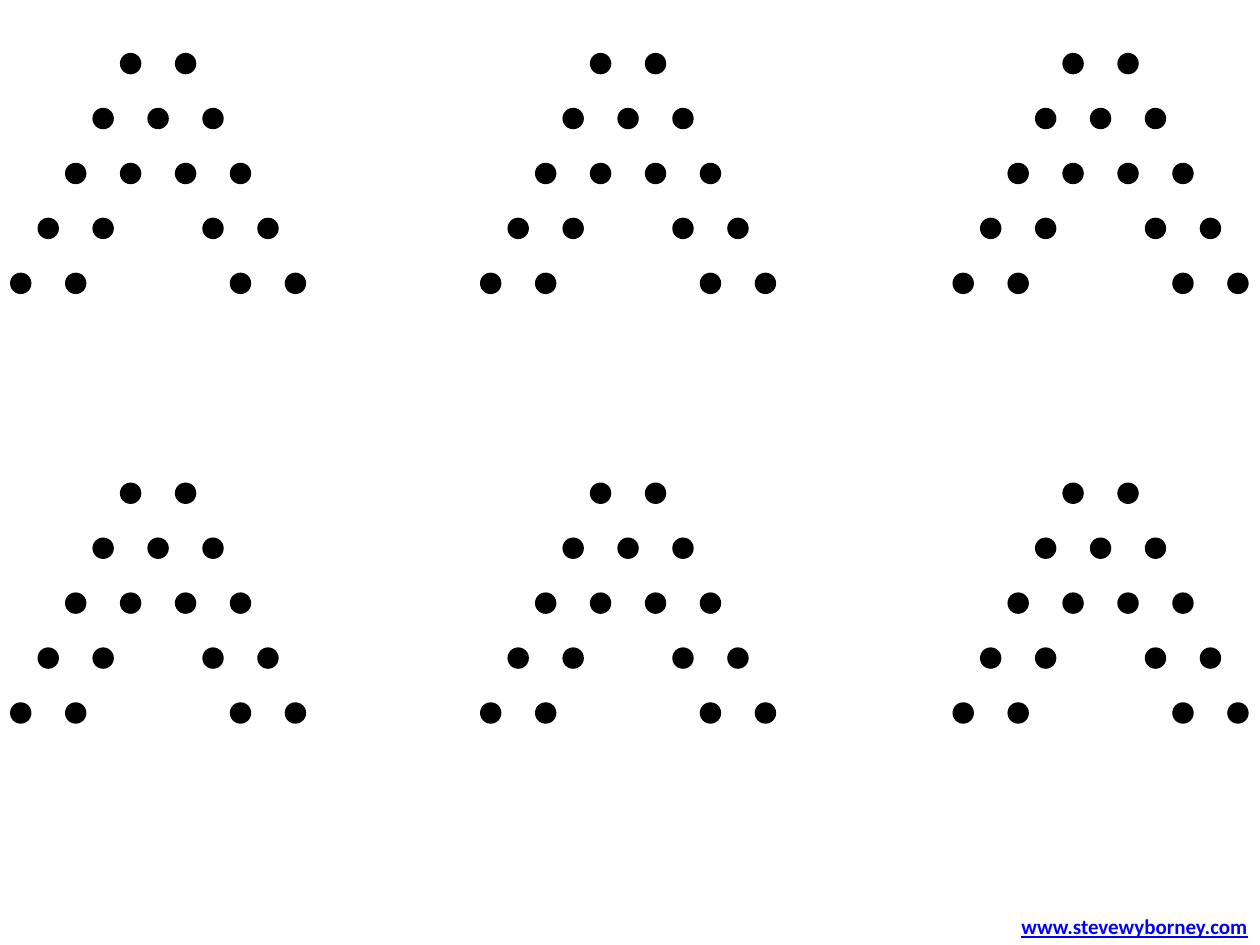
"""Build a sheet of six dot-pattern letters with a web address in the corner."""
from dataclasses import dataclass
from itertools import product

from pptx import Presentation
from pptx import util as u
from pptx.dml import color
from pptx.enum import shapes, text


@dataclass(frozen=True)
class Theme:
    """Colours, font and type size of the sheet."""
    dot: color.RGBColor = color.RGBColor(0, 0, 0)
    address: color.RGBColor = color.RGBColor(0, 0, 255)
    font: str = "Calibri"
    address_size: u.Pt = u.Pt(12)


LETTER_ROWS = ("oo", "ooo", "oooo", "oo.oo", "oo..oo")
LETTER_LEFTS = (0.08, 3.81, 7.56)
LETTER_TOPS = (0.42, 3.83)
DOT_SIZE = 0.17
DOT_PITCH = 2.18 / 5


class DotSheet:
    """Draws the elements of the sheet in one style."""

    def __init__(self, slide, theme):
        """Keep the slide and its style."""
        self.slide = slide
        self.theme = theme

    def dot(self, letter, left, top):
        """Add one filled dot to a letter."""
        size = u.Inches(DOT_SIZE)
        dot = letter.shapes.add_shape(
            shapes.MSO_SHAPE.OVAL, u.Inches(left), u.Inches(top), size, size)
        dot.shadow.inherit = False
        dot.fill.solid()
        dot.fill.fore_color.rgb = self.theme.dot
        dot.line.fill.background()

    def letter(self, left, top):
        """Add a grouped letter with its rows centred on each other."""
        letter = self.slide.shapes.add_group_shape()
        widest = max(map(len, LETTER_ROWS))
        for level, row in enumerate(LETTER_ROWS):
            indent = (widest - len(row)) / 2
            for place, mark in enumerate(row):
                if mark == "o":
                    self.dot(letter, left + (indent + place) * DOT_PITCH,
                             top + level * DOT_PITCH)

    def address(self, wording, left, top, width, height):
        """Add the underlined web address, aligned right."""
        box = self.slide.shapes.add_textbox(
            *(u.Inches(length) for length in (left, top, width, height)))
        frame = box.text_frame
        frame.word_wrap = False
        frame.auto_size = text.MSO_AUTO_SIZE.SHAPE_TO_FIT_TEXT
        paragraph = frame.paragraphs[0]
        paragraph.alignment = text.PP_ALIGN.RIGHT
        run = paragraph.add_run()
        run.text = wording
        run.font.name = self.theme.font
        run.font.size = self.theme.address_size
        run.font.bold = True
        run.font.underline = True
        run.font.color.rgb = self.theme.address


def main():
    """Lay out the letters and the address, then save the sheet."""
    deck = Presentation()
    deck.slide_width, deck.slide_height = u.Inches(10), u.Inches(7.5)
    sheet = DotSheet(deck.slides.add_slide(deck.slide_layouts[6]), Theme())
    for top, left in product(LETTER_TOPS, LETTER_LEFTS):
        sheet.letter(left, top)
    sheet.address("www.stevewyborney.com", 7.98, 7.2, 2.02, 0.3)
    deck.save("out.pptx")


if __name__ == "__main__":
    main()
